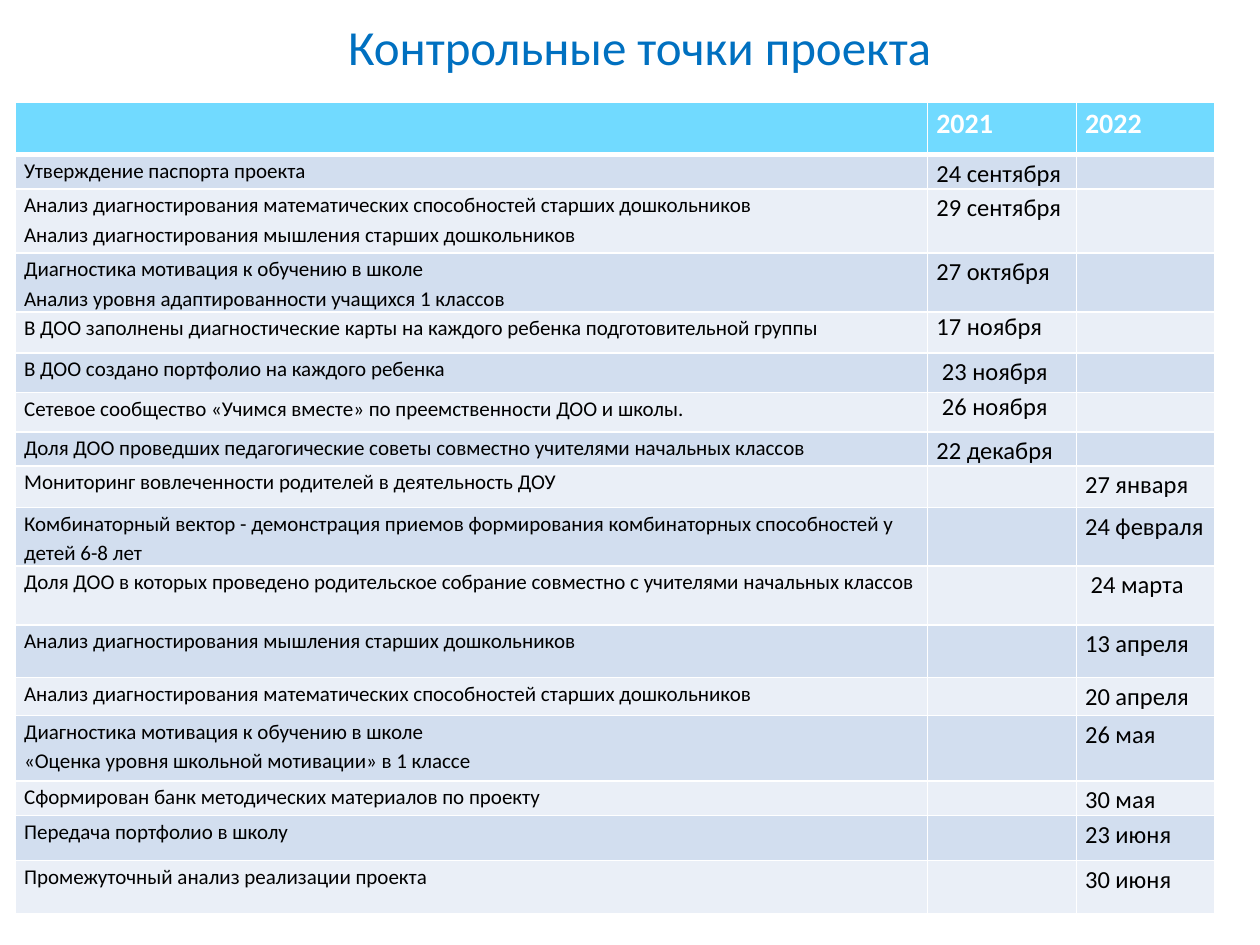
from lxml import etree
from pptx import Presentation
from pptx.dml.color import RGBColor
from pptx.enum.text import MSO_ANCHOR, PP_ALIGN
from pptx.oxml.ns import qn
from pptx.util import Pt

TOP, CENTER = MSO_ANCHOR.TOP, PP_ALIGN.CENTER

THEME = {
    "font": "Calibri",
    "title": "0070C0", "header": "71DAFF", "bands": ("D2DEEF", "EAEFF7"),
    "text": "000000", "white": "FFFFFF",
    "title_size": 28, "header_size": 16, "task_size": 12, "date_size": 14,
}

TITLE = "Контрольные точки проекта"
YEARS = ("2021", "2022")
HEADER_HEIGHT = 30.2
COLUMN_WIDTHS = (521.3, 85, 79.2)
LOOSE, SINGLE = 1.15, 1.0

# year, date, row height, date line spacing, task lines
CHECKPOINTS = [
    ("2021", "24 сентября", 19.6, LOOSE, ["Утверждение паспорта проекта"]),
    ("2021", "29 сентября", 36.6, LOOSE, [
        "Анализ диагностирования математических способностей старших дошкольников",
        "Анализ диагностирования мышления старших дошкольников"]),
    ("2021", "27 октября", 33.7, LOOSE, [
        "Диагностика мотивация к обучению в школе",
        "Анализ уровня адаптированности учащихся 1 классов"]),
    ("2021", "17 ноября", 23.5, SINGLE, [
        "В ДОО заполнены диагностические карты на каждого ребенка подготовительной группы"]),
    ("2021", " 23 ноября", 22.6, LOOSE, ["В ДОО создано портфолио на каждого ребенка"]),
    ("2021", " 26 ноября", 22.4, SINGLE, [
        "Сетевое сообщество «Учимся вместе» по преемственности ДОО и школы."]),
    ("2021", "22 декабря", 19.6, LOOSE, [
        "Доля ДОО проведших педагогические советы совместно учителями начальных классов"]),
    ("2022", "27 января", 23.5, LOOSE, [
        "Мониторинг вовлеченности родителей в деятельность ДОУ"]),
    ("2022", "24 февраля", 33.7, LOOSE, [
        "Комбинаторный вектор - демонстрация приемов формирования "
        "комбинаторных способностей у детей 6-8 лет"]),
    ("2022", " 24 марта", 33.7, LOOSE, [
        "Доля ДОО в которых проведено родительское собрание совместно "
        "с учителями начальных классов"]),
    ("2022", "13 апреля", 30, LOOSE, [
        "Анализ диагностирования мышления старших дошкольников"]),
    ("2022", "20 апреля", 21.7, LOOSE, [
        "Анализ диагностирования математических способностей старших дошкольников"]),
    ("2022", "26 мая", 37.5, LOOSE, [
        "Диагностика мотивация к обучению в школе",
        "«Оценка уровня школьной мотивации» в 1 классе"]),
    ("2022", "30 мая", 19.6, LOOSE, [
        "Сформирован банк методических материалов по проекту"]),
    ("2022", "23 июня", 25.7, LOOSE, ["Передача портфолио в школу"]),
    ("2022", "30 июня", 30.2, LOOSE, ["Промежуточный анализ реализации проекта"]),
]


def add_run(p, text, size, color, bold=False):
    r = p.add_run()
    r.text = text
    r.font.name = THEME["font"]
    r.font.size = Pt(size)
    r.font.bold = bold
    r.font.color.rgb = RGBColor.from_string(THEME[color])


def add_borders(cell, bottom):
    tc_pr = cell.fill._xPr
    for index, (side, width) in enumerate((("lnL", 1), ("lnR", 1), ("lnT", 1), ("lnB", bottom))):
        line = etree.Element(qn(f"a:{side}"), w=str(Pt(width)))
        fill = etree.SubElement(line, qn("a:solidFill"))
        etree.SubElement(fill, qn("a:srgbClr"), val=THEME["white"])
        tc_pr.insert(index, line)


def fill_cell(cell, lines, size, fill, color="text", bold=False, spacing=LOOSE, bottom=1):
    cell.margin_left = cell.margin_right = Pt(5)
    cell.margin_top = cell.margin_bottom = 0
    cell.fill.solid()
    cell.fill.fore_color.rgb = RGBColor.from_string(fill)
    add_borders(cell, bottom)
    tf = cell.text_frame
    for index, text in enumerate(lines):
        p = tf.add_paragraph() if index else tf.paragraphs[0]
        p.line_spacing = spacing
        add_run(p, text, size, color, bold)
    if not lines:
        etree.SubElement(tf.paragraphs[0]._p, qn("a:endParaRPr"), sz=str(size * 100))


def add_title(s):
    sp = s.shapes.title
    sp.left, sp.top, sp.width, sp.height = Pt(10), Pt(9.4), Pt(711), Pt(39.6)
    tf = sp.text_frame
    tf.word_wrap = True
    tf.vertical_anchor = TOP
    p = tf.paragraphs[0]
    p.alignment = CENTER
    p.line_spacing = 0.9
    add_run(p, TITLE, THEME["title_size"], "title")


def add_schedule(s):
    heights = [HEADER_HEIGHT] + [row[2] for row in CHECKPOINTS]
    frame = s.shapes.add_table(len(heights), len(COLUMN_WIDTHS), Pt(8.8), Pt(58.2),
                               Pt(sum(COLUMN_WIDTHS)), Pt(sum(heights)))
    table = frame.table
    for column, width in zip(table.columns, COLUMN_WIDTHS):
        column.width = Pt(width)
    for row, height in zip(table.rows, heights):
        row.height = Pt(height)
    for col, year in enumerate(("",) + YEARS):
        fill_cell(table.cell(0, col), [year] if year else [], THEME["header_size"],
                  THEME["header"], "white", bold=True, bottom=3)
    for index, (year, date, _, spacing, tasks) in enumerate(CHECKPOINTS):
        row, band = index + 1, THEME["bands"][index % 2]
        fill_cell(table.cell(row, 0), tasks, THEME["task_size"], band)
        for col, column_year in enumerate(YEARS, 1):
            dates = [date] if year == column_year else []
            size = THEME["date_size"] if dates else THEME["task_size"]
            fill_cell(table.cell(row, col), dates, size, band, spacing=spacing)


def main():
    prs = Presentation()
    prs.slide_width, prs.slide_height = Pt(720), Pt(540)
    s = prs.slides.add_slide(prs.slide_layouts[5])
    add_title(s)
    add_schedule(s)
    prs.save("out.pptx")


if __name__ == "__main__":
    main()
